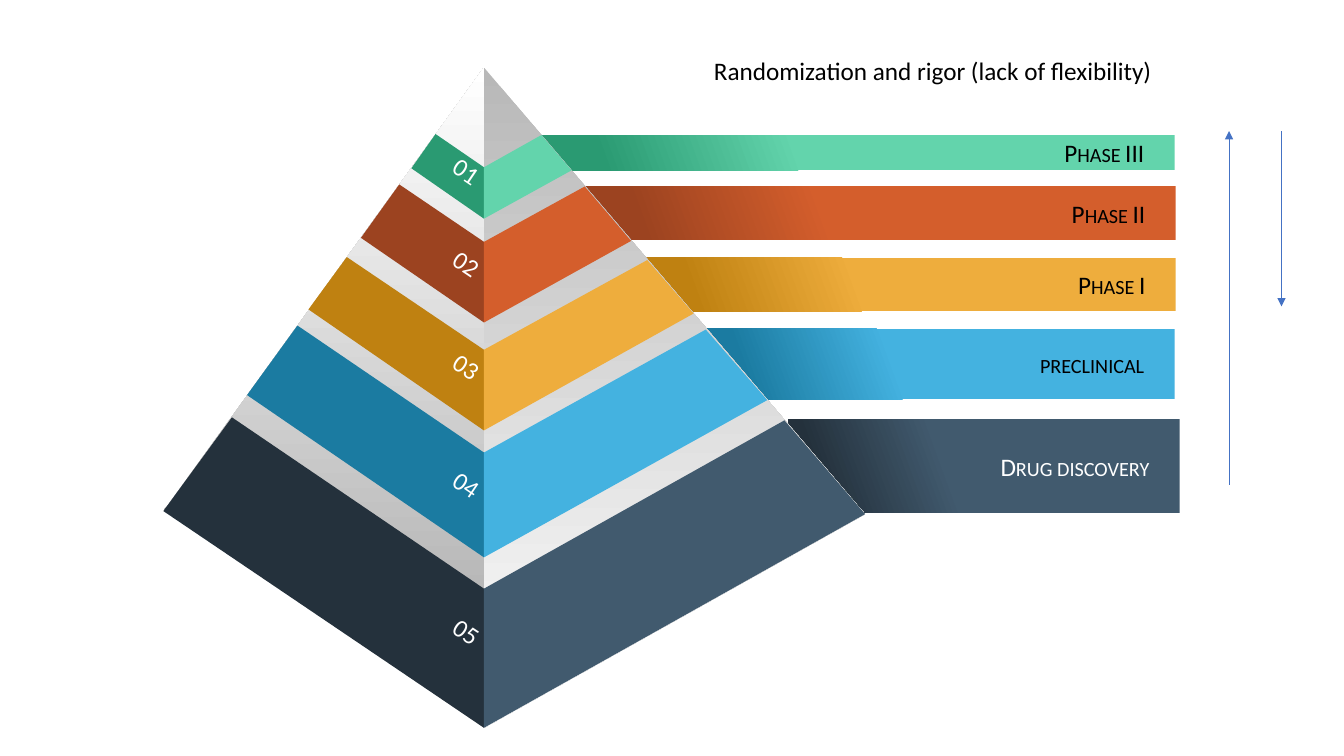
import pptx
import pptx.util
import pptx.dml.color
import pptx.enum.shapes
import pptx.enum.text
import lxml.etree
import pptx.oxml.ns

RGB = pptx.dml.color.RGBColor
SHAPE = pptx.enum.shapes.MSO_SHAPE
ALIGN = pptx.enum.text.PP_ALIGN
ANCHOR = pptx.enum.text.MSO_ANCHOR
AUTO = pptx.enum.text.MSO_AUTO_SIZE
qn = pptx.oxml.ns.qn

PX = 9144  # 100 px to the inch
BLACK, WHITE = RGB(0, 0, 0), RGB(0xFF, 0xFF, 0xFF)
GREY, BLUE = RGB(0xB8, 0xB8, 0xB8), RGB(0x44, 0x72, 0xC4)
GREEN, DARK_GREEN = RGB(0x63, 0xD4, 0xAC), RGB(0x2A, 0x9A, 0x72)
RUST, DARK_RUST = RGB(0xD4, 0x5E, 0x2C), RGB(0x9C, 0x43, 0x20)
GOLD, DARK_GOLD = RGB(0xEE, 0xAD, 0x3D), RGB(0xBF, 0x81, 0x11)
SKY, DARK_SKY = RGB(0x44, 0xB2, 0xE0), RGB(0x1B, 0x7B, 0xA1)
SLATE, DARK_SLATE = RGB(0x41, 0x5A, 0x6E), RGB(0x24, 0x31, 0x3C)
SPINE = 480  # x of the pyramid's front edge

# label, text colour, light, dark, band (x, y, w, h), spine (top, bottom),
# left edge (top, bottom), right edge (top, bottom), top of number
levels = [
    ("Phase III", BLACK, GREEN, DARK_GREEN, (535, 134, 630, 35), (166, 217),
     ((432, 133), (408, 167)), ((537, 134), (567, 169)), 128),
    ("Phase II", BLACK, RUST, DARK_RUST, (579, 185, 587, 53), (240, 320),
     ((396, 183), (358, 236)), ((580, 185), (626, 239)), 220),
    ("Phase I", BLACK, GOLD, DARK_GOLD, (637, 256, 529, 53), (347, 427),
     ((344, 255), (306, 307)), ((642, 258), (688, 311)), 322),
    ("preclinical", BLACK, SKY, DARK_SKY, (698, 326, 467, 70), (449, 553),
     ((295, 323), (245, 392)), ((700, 327), (761, 397)), 439),
    ("Drug discovery", WHITE, SLATE, DARK_SLATE, (782, 416, 388, 93), (584, 722),
     ((230, 414), (162, 507)), ((778, 417), (858, 510)), 585),
]

prs = pptx.Presentation()
prs.slide_width, prs.slide_height = 1333 * PX, 750 * PX
s = prs.slides.add_slide(prs.slide_layouts[5])


def paint(sp, *stops, angle=0):
    """Fill with one colour, or with two (position, colour) stops."""
    sp.shadow.inherit = False
    sp.line.fill.background()
    if len(stops) == 1:
        sp.fill.solid()
        sp.fill.fore_color.rgb = stops[0]
        return
    sp.fill.gradient()
    sp.fill.gradient_angle = angle
    for stop, (position, color) in zip(sp.fill.gradient_stops, stops):
        stop.position, stop.color.rgb = position, color


def write(sp, text, color, align):
    p = sp.text_frame.paragraphs[0]
    p.alignment = align
    r = p.add_run()
    r.text = text
    r.font.name, r.font.size = "Calibri", pptx.util.Pt(18)
    r.font.color.rgb = color
    return r


# Title
sp = s.shapes.title
sp.left, sp.top, sp.width, sp.height = 698 * PX, 50 * PX, 572 * PX, 40 * PX
tf = sp.text_frame
tf.word_wrap, tf.auto_size, tf.vertical_anchor = True, AUTO.NONE, ANCHOR.TOP
write(sp, "Randomization and rigor (lack of flexibility)", BLACK, ALIGN.LEFT)

# Bands, from the base up
for label, color, light, dark, band, *rest in reversed(levels):
    sp = s.shapes.add_shape(SHAPE.RECTANGLE, *(v * PX for v in band))
    paint(sp, (0.59, light), (0.9, dark), angle=200)
    tf = sp.text_frame
    tf.word_wrap, tf.vertical_anchor = True, ANCHOR.MIDDLE
    tf.margin_right = 30 * PX
    r = write(sp, label, color, ALIGN.RIGHT)
    r.font._element.set("cap", "small")

# Grey faces of the pyramid
for corners, start, angle in (([(858, 510), (851, 502)], 0, 270),
                              ([(163, 505), (166, 502)], 0.21, 90)):
    fb = s.shapes.build_freeform(SPINE, 722, PX)
    fb.add_line_segments(corners + [(SPINE, 67)])
    paint(fb.convert_to_shape(), (start, GREY), (1, WHITE), angle=angle)

# Coloured stripes and their numbers
for n, (label, color, light, dark, band, spine, left, right, top) in enumerate(levels, 1):
    for (upper, lower), fill in ((left, dark), (right, light)):
        fb = s.shapes.build_freeform(*upper, PX)
        fb.add_line_segments([lower, (SPINE, spine[1]), (SPINE, spine[0])])
        paint(fb.convert_to_shape(), fill)
    sp = s.shapes.add_textbox(370 * PX, top * PX, 117 * PX, 56 * PX)
    sp.rotation = 34
    sp.text_frame.word_wrap = True
    sp.text_frame.auto_size = AUTO.SHAPE_TO_FIT_TEXT
    write(sp, f"{n:02}", WHITE, ALIGN.RIGHT)

# Arrows
for x, start, end in ((1219, 481, 130), (1271, 130, 304)):
    c = s.shapes.add_connector(pptx.enum.shapes.MSO_CONNECTOR.STRAIGHT,
                               x * PX, start * PX, x * PX, end * PX)
    c.line.color.rgb, c.line.width = BLUE, pptx.util.Pt(0.5)
    spPr = c._element.spPr
    lxml.etree.SubElement(spPr.find(qn("a:ln")), qn("a:tailEnd"), type="triangle")
    lxml.etree.SubElement(spPr, qn("a:effectLst"))

prs.save("out.pptx")
